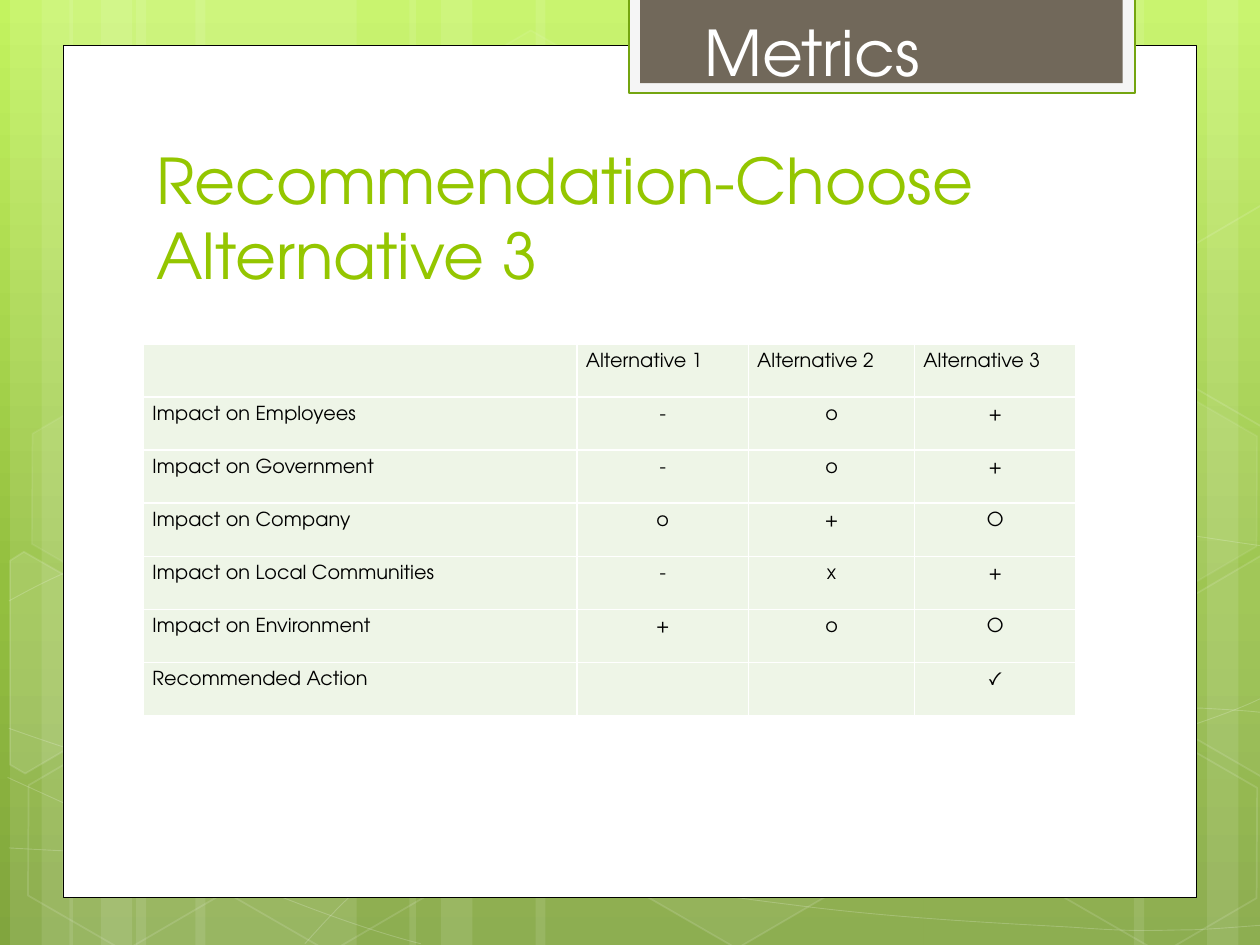
from pptx import Presentation
from pptx.dml.color import RGBColor
from pptx.enum.shapes import MSO_SHAPE
from pptx.enum.text import MSO_ANCHOR, MSO_AUTO_SIZE, PP_ALIGN
from pptx.oxml.ns import qn
from pptx.util import Inches, Pt
from lxml import etree
from copy import deepcopy

RECTANGLE, HEXAGON = MSO_SHAPE.RECTANGLE, MSO_SHAPE.HEXAGON
LEFT, CENTER = PP_ALIGN.LEFT, PP_ALIGN.CENTER
WIDTH, HEIGHT = 10, 7.5
FONT = "TeX Gyre Adventor"
WHITE, BLACK, GREEN, CELL = "FFFFFF", "000000", "94C600", "EEF5E7"

TITLE = "Recommendation-Choose Alternative 3"
TAB_LABEL = "Metrics"
TABLE = [
    ("", "Alternative 1", "Alternative 2", "Alternative 3"),
    ("Impact on Employees", "-", "o", "+"),
    ("Impact on Government", "-", "o", "+"),
    ("Impact on Company", "o", "+", "O"),
    ("Impact on Local Communities", "-", "x", "+"),
    ("Impact on Environment", "+", "o", "O"),
    ("Recommended Action", "", "", "✓"),
]
COLUMN_WIDTHS = (3.44, 1.36, 1.32, 1.28)
TABLE_HEIGHT = 2.95

GRADIENT = [(0, "C3F35F"), (0.62, "93BF3F"), (1, "81A53E")]
# Left edge and width of each full-height stripe
STRIPES = [(1.08, 1.75), (0.08, 0.5), (0.33, 0.83), (1.55, 1.75), (0.55, 0.5),
           (0.8, 0.83), (7.33, 1.75), (9.58, 0.5), (9, 0.83), (4.25, 3.08),
           (3.25, 0.5), (3.5, 0.83)]
# Start point, then for each cubic segment two control points and an end point
WAVES = [
    [(0.07, 6.73), (0.61, 6.76), (1.15, 6.79), (1.9, 6.78),
     (2.65, 6.77), (3.58, 6.75), (4.58, 6.65), (5.58, 6.55), (7, 6.36), (7.92, 6.17),
     (8.83, 5.98), (9.77, 5.68), (10.07, 5.51)],
    [(0.07, 4.77), (0.36, 4.61), (0.65, 4.46), (1.21, 4.31),
     (1.78, 4.16), (2.59, 3.94), (3.47, 3.87), (4.36, 3.8), (5.44, 3.79), (6.54, 3.87),
     (7.64, 3.95), (9.47, 4.26), (10.07, 4.34)],
    [(0.06, 6.17), (1.27, 6.72), (2.47, 7.27), (3.34, 7.49)],
    [(0.07, 5.78), (0.38, 5.89), (0.7, 6), (1.28, 6.16),
     (1.86, 6.31), (2.73, 6.56), (3.57, 6.73), (4.4, 6.9), (5.45, 7.08), (6.28, 7.18),
     (7.11, 7.29), (8, 7.33), (8.53, 7.36), (9.05, 7.4), (9.19, 7.38), (9.45, 7.38),
     (9.71, 7.37), (9.89, 7.35), (10.07, 7.34)],
    [(2.42, 7.49), (2.6, 7.29), (2.78, 7.09), (3.02, 6.91),
     (3.26, 6.73), (3.6, 6.53), (3.88, 6.39), (4.16, 6.25), (4.33, 6.19), (4.7, 6.09),
     (5.06, 5.99), (5.73, 5.85), (6.08, 5.78), (6.44, 5.71), (6.49, 5.71), (6.8, 5.69),
     (7.11, 5.66), (7.6, 5.63), (7.94, 5.62), (8.29, 5.61), (8.86, 5.62), (8.86, 5.62),
     (9.08, 5.62), (9.31, 5.62), (9.53, 5.62), (9.71, 5.63), (9.88, 5.64), (9.97, 5.65),
     (10.06, 5.66), (10.03, 5.65), (10.06, 5.66)],
]
# Left, top, fill opacity and line opacity in percent
HEXAGONS = [(3.34, 0.36, 4, 8), (4.97, 5.89, 6, 12), (0.11, 5.91, None, 12),
            (0.14, 3.12, 7, 8), (1.74, 5.92, None, 12), (8.34, 5.93, None, 12),
            (8.34, 3.14, 7, 8)]
# Hexagons cut off by the slide edge: corners and fill opacity
CUT_HEXAGONS = [
    ([(0.08, 4.45), (0.19, 4.38), (0.96, 4.82), (0.95, 5.7), (0.2, 6.14), (0.08, 6.07)], 10),
    ([(9.26, 4.85), (10.01, 4.41), (10.09, 4.46), (10.09, 6.13), (10.02, 6.17), (9.26, 5.73)], 4),
    ([(9.26, 2.07), (10.01, 1.63), (10.1, 1.68), (10.09, 3.35), (10.02, 3.39), (9.26, 2.95)], None),
]
# Box, fill, line colour and line width
PANELS = [((0.5, 0.36, 9, 6.76), WHITE, BLACK, 0.5),
          ((4.99, -0.02, 4.02, 0.76), "F5F5F5", "74A510", 1.25),
          ((5.08, -0.02, 3.83, 0.68), "71685A", None, 0)]


def rgb(color):
    return RGBColor.from_string(color)


def paint(fill, color, opacity=100):
    fill.solid()
    fill.fore_color.rgb = rgb(color)
    if opacity < 100:
        element = fill._xPr.find(qn("a:solidFill"))[0]
        etree.SubElement(element, qn("a:alpha"), val=str(opacity * 1000))


def style(shape, fill=None, line=None, width=1, fill_opacity=100, line_opacity=100):
    shape.shadow.inherit = False
    if fill:
        paint(shape.fill, fill, fill_opacity)
    else:
        shape.fill.background()
    if line:
        shape.line.width = Pt(width)
        paint(shape.line.fill, line, line_opacity)
    else:
        shape.line.fill.background()


def add_shape(slide, kind, box, **look):
    shape = slide.shapes.add_shape(kind, *map(Inches, box))
    style(shape, **look)
    return shape


def add_outline(slide, points, closed, **look):
    start, *rest = [(Inches(x), Inches(y)) for x, y in points]
    builder = slide.shapes.build_freeform(*start)
    builder.add_line_segments(rest, close=closed)
    shape = builder.convert_to_shape()
    style(shape, **look)
    return shape


def bend(shape):
    """Turn every three straight segments into one cubic curve."""
    lines = list(shape._element.iter(qn("a:lnTo")))
    for index in range(0, len(lines), 3):
        first, *others = lines[index:index + 3]
        curve = etree.Element(qn("a:cubicBezTo"))
        first.addprevious(curve)
        for line in (first, *others):
            curve.append(line[0])
            line.getparent().remove(line)


def write(frame, text, size, color, align=LEFT, line_spacing=None, space=None):
    paragraph = frame.paragraphs[0]
    paragraph.alignment = align
    paragraph.line_spacing = line_spacing
    if space is not None:
        paragraph.space_before = paragraph.space_after = Pt(space)
    run = paragraph.add_run()
    run.text = text
    run.font.name, run.font.size = FONT, Pt(size)
    run.font.color.rgb = rgb(color)


def add_borders(cell, color, width):
    properties = cell._tc.get_or_add_tcPr()
    for index, side in enumerate(("lnL", "lnR", "lnT", "lnB")):
        line = etree.Element(qn("a:" + side), w=str(Pt(width)))
        fill = etree.SubElement(line, qn("a:solidFill"))
        etree.SubElement(fill, qn("a:srgbClr"), val=color)
        properties.insert(index, line)


def draw_background(slide):
    fill = slide.background.fill
    fill.gradient()
    fill.gradient_angle = 270
    first = fill.gradient_stops[0]._gs
    first.addnext(deepcopy(first))
    for stop, (position, color) in zip(fill.gradient_stops, GRADIENT):
        stop.position = position
        stop.color.rgb = rgb(color)

    for left, width in STRIPES:
        add_shape(slide, RECTANGLE, (left, 0, width, HEIGHT), fill=WHITE, fill_opacity=10)
    for points in WAVES:
        bend(add_outline(slide, points, False, line=WHITE, width=0.5, line_opacity=20))
    for left, top, opacity, line_opacity in HEXAGONS:
        hexagon = add_shape(slide, HEXAGON, (left, top, 1.75, 1.52), fill=opacity and WHITE,
                            fill_opacity=opacity, line=WHITE, line_opacity=line_opacity)
        hexagon.rotation = 30
        hexagon.adjustments[0] = 0.285
    for corners, opacity in CUT_HEXAGONS:
        add_outline(slide, corners, True, fill=opacity and WHITE, fill_opacity=opacity,
                    line=WHITE, line_opacity=12)
    for box, fill, line, width in PANELS:
        add_shape(slide, RECTANGLE, box, fill=fill, line=line, width=width)


def place_title(slide):
    title = slide.shapes.title
    title.left, title.top, title.width, title.height = map(Inches, (1.14, 1.12, 7.68, 1.25))
    title.text_frame.vertical_anchor = MSO_ANCHOR.BOTTOM
    title.text_frame.auto_size = MSO_AUTO_SIZE.NONE
    write(title.text_frame, TITLE, 36, GREEN)
    slide.shapes._spTree.append(title._element)  # bring in front of the panels


def draw_table(slide):
    box = (1.14, 2.73, sum(COLUMN_WIDTHS), TABLE_HEIGHT)
    table = slide.shapes.add_table(len(TABLE), len(COLUMN_WIDTHS), *map(Inches, box)).table
    table.first_row = table.horz_banding = False
    for column, width in zip(table.columns, COLUMN_WIDTHS):
        column.width = Inches(width)
    for row, texts in enumerate(TABLE):
        for column, text in enumerate(texts):
            cell = table.cell(row, column)
            cell.margin_left = cell.margin_right = Inches(0.07)
            cell.margin_top = cell.margin_bottom = 0
            paint(cell.fill, CELL)
            add_borders(cell, WHITE, 1)
            if text:
                write(cell.text_frame, text, 11, BLACK, line_spacing=1.5, space=5,
                      align=CENTER if row and column else LEFT)


def main():
    presentation = Presentation()
    presentation.slide_width, presentation.slide_height = Inches(WIDTH), Inches(HEIGHT)
    slide = presentation.slides.add_slide(presentation.slide_layouts[5])
    draw_background(slide)
    place_title(slide)
    draw_table(slide)
    label = slide.shapes.add_textbox(*map(Inches, (5.49, 0.06, 1.94, 0.71)))
    label.text_frame.word_wrap = False
    write(label.text_frame, TAB_LABEL, 36, WHITE)
    presentation.save("out.pptx")


if __name__ == "__main__":
    main()
